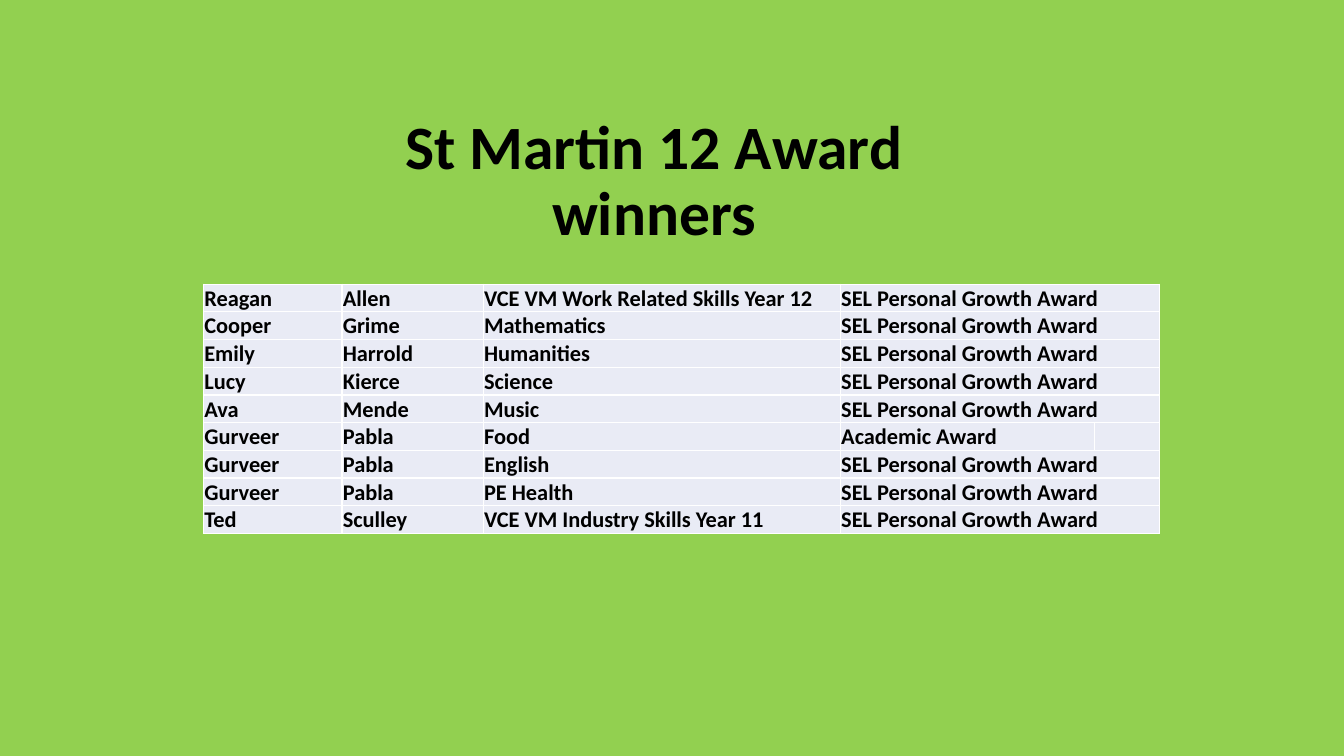
from lxml.etree import SubElement
from pptx import Presentation
from pptx.dml.color import RGBColor
from pptx.enum.text import MSO_ANCHOR, PP_ALIGN
from pptx.oxml.ns import qn
from pptx.util import Cm, Pt

TITLE = "St Martin 12 Award winners"
GROWTH = "SEL Personal Growth Award"
ACADEMIC = "Academic Award"
WINNERS = [
    ("Reagan", "Allen", "VCE VM Work Related Skills Year 12", GROWTH),
    ("Cooper", "Grime", "Mathematics", GROWTH),
    ("Emily", "Harrold", "Humanities", GROWTH),
    ("Lucy", "Kierce", "Science", GROWTH),
    ("Ava", "Mende", "Music", GROWTH),
    ("Gurveer", "Pabla", "Food", ACADEMIC),
    ("Gurveer", "Pabla", "English", GROWTH),
    ("Gurveer", "Pabla", "PE Health", GROWTH),
    ("Ted", "Sculley", "VCE VM Industry Skills Year 11", GROWTH),
]
COLUMN_WIDTHS = [Cm(3.49), Cm(3.56), Cm(9), Cm(6.41), Cm(1.63)]
ROW_HEIGHT = Cm(0.66)
AWARD, SPARE = 3, 4

GREEN = RGBColor(0x92, 0xD0, 0x50)
LAVENDER = RGBColor(0xE9, 0xEB, 0xF5)
BLACK = RGBColor(0, 0, 0)
WHITE = RGBColor(0xFF, 0xFF, 0xFF)


def set_font(paragraph, size):
    font = paragraph.font
    font.name, font.size, font.bold = "Calibri", Pt(size), True
    font.color.rgb = BLACK


def add_borders(cell):
    properties = cell._tc.get_or_add_tcPr()
    for position, side in enumerate(("lnL", "lnR", "lnT", "lnB")):
        line = properties.makeelement(qn(f"a:{side}"), {"w": str(Pt(1))})
        fill = SubElement(line, qn("a:solidFill"))
        SubElement(fill, qn("a:srgbClr"), val=str(WHITE))
        properties.insert(position, line)


def style_cell(cell):
    cell.fill.solid()
    cell.fill.fore_color.rgb = LAVENDER
    cell.vertical_anchor = MSO_ANCHOR.BOTTOM
    cell.margin_left = cell.margin_right = cell.margin_top = Cm(0.02)
    cell.margin_bottom = 0
    set_font(cell.text_frame.paragraphs[0], 16)
    add_borders(cell)


presentation = Presentation()
presentation.slide_width, presentation.slide_height = Cm(33.87), Cm(19.05)
slide = presentation.slides.add_slide(presentation.slide_layouts[6])
slide.background.fill.solid()
slide.background.fill.fore_color.rgb = GREEN

title = slide.shapes.add_textbox(Cm(7.24), Cm(3.35), Cm(18.49), Cm(2.51)).text_frame
title.word_wrap = True
title.vertical_anchor = MSO_ANCHOR.MIDDLE
heading = title.paragraphs[0]
heading.text = TITLE
heading.alignment = PP_ALIGN.CENTER
heading.line_spacing = 0.9
set_font(heading, 44)

awards = slide.shapes.add_table(
    len(WINNERS), len(COLUMN_WIDTHS), Cm(5.13), Cm(7.16),
    sum(COLUMN_WIDTHS), ROW_HEIGHT * len(WINNERS)).table
awards.first_row = awards.horz_banding = False
for column, width in zip(awards.columns, COLUMN_WIDTHS):
    column.width = width

for row, winner in enumerate(WINNERS):
    awards.rows[row].height = ROW_HEIGHT
    for column, text in enumerate(winner):
        awards.cell(row, column).text = text
    for column in range(len(COLUMN_WIDTHS)):
        style_cell(awards.cell(row, column))
    if winner[AWARD] == GROWTH:
        awards.cell(row, AWARD).merge(awards.cell(row, SPARE))

presentation.save("out.pptx")
